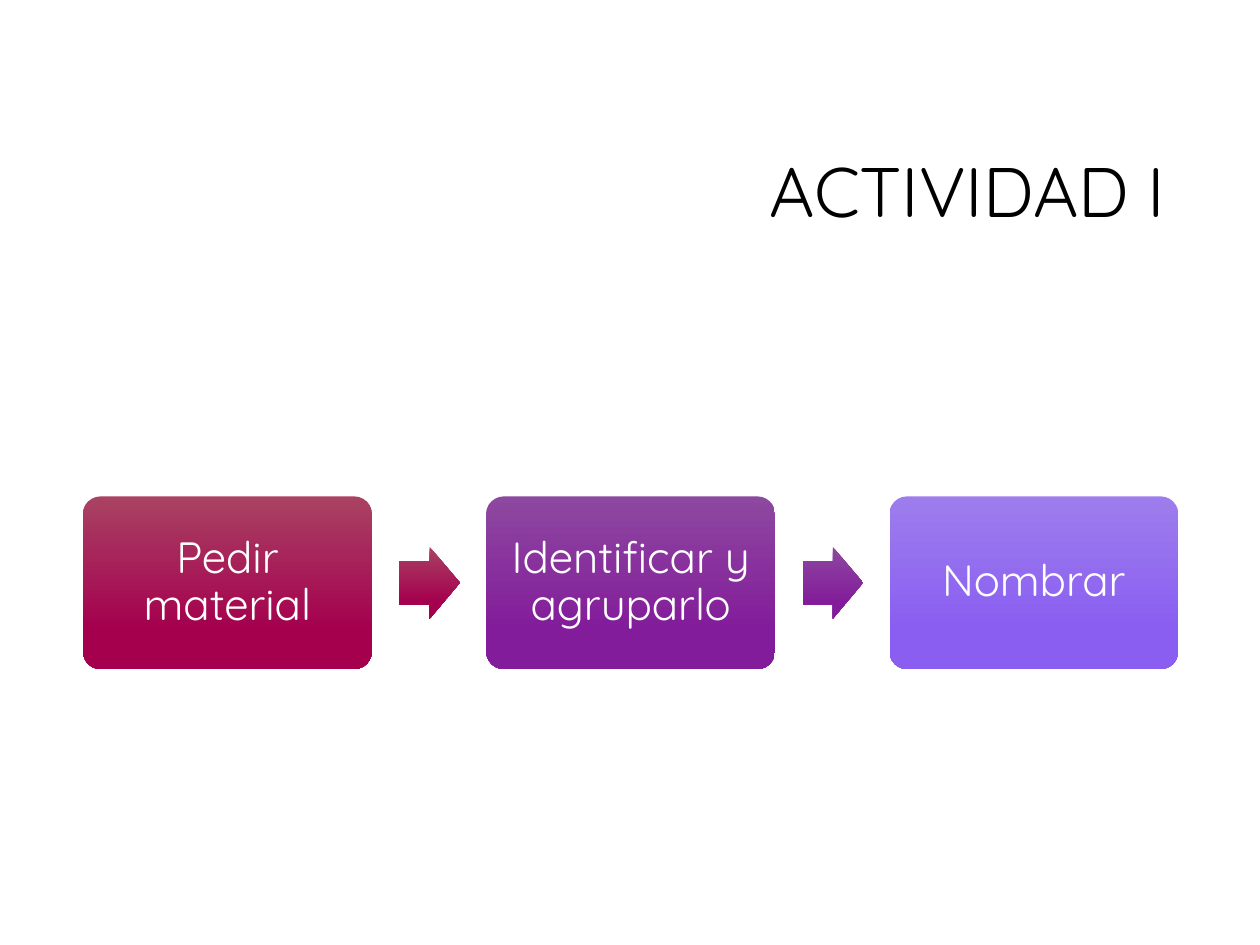
from pptx import Presentation
from pptx.dml.color import RGBColor
from pptx.enum.shapes import MSO_SHAPE
from pptx.enum.text import MSO_ANCHOR, PP_ALIGN
from pptx.util import Inches, Pt

TITLE = "ACTIVIDAD I"
STEPS = [
    ("Pedir material", RGBColor(0xA9, 0x42, 0x63), RGBColor(0xA4, 0x00, 0x4E)),
    ("Identificar y agruparlo", RGBColor(0x8D, 0x48, 0xA0), RGBColor(0x83, 0x1C, 0x9A)),
    ("Nombrar", RGBColor(0x9D, 0x7D, 0xED), RGBColor(0x8A, 0x5E, 0xF1)),
]
BLACK = RGBColor(0x00, 0x00, 0x00)
WHITE = RGBColor(0xFF, 0xFF, 0xFF)
FONT = "Quicksand"

SLIDE_W, SLIDE_H = Inches(10), Inches(7.5)
FLOW_LEFT, COLUMN_STEP = Inches(0.66), Inches(3.2)
STEP_W, STEP_H = Inches(2.29), Inches(1.37)
ARROW_W, ARROW_H = Inches(0.48), Inches(0.57)
ARROW_GAP = Inches(0.22)
FLOW_MIDDLE = Inches(4.625)
INSET = Inches(0.14)


def write(frame, text, size, color, align):
    frame.text = text
    frame.word_wrap = True
    frame.vertical_anchor = MSO_ANCHOR.MIDDLE
    paragraph = frame.paragraphs[0]
    paragraph.alignment = align
    paragraph.line_spacing = 0.9
    font = paragraph.runs[0].font
    font.name, font.size, font.color.rgb = FONT, Pt(size), color


def add_block(slide, preset, adjustments, left, width, height, top_color, bottom_color):
    block = slide.shapes.add_shape(preset, left, FLOW_MIDDLE - height // 2, width, height)
    for index, value in enumerate(adjustments):
        block.adjustments[index] = value
    block.shadow.inherit = False
    block.line.fill.background()
    block.fill.gradient()
    block.fill.gradient_angle = 270
    stops = block.fill.gradient_stops
    for stop, position, color in zip(stops, (0, 0.78), (top_color, bottom_color)):
        stop.position = position
        stop.color.rgb = color
    return block


def main():
    presentation = Presentation()
    presentation.slide_width, presentation.slide_height = SLIDE_W, SLIDE_H
    slide = presentation.slides.add_slide(presentation.slide_layouts[5])

    title = slide.shapes.title
    title.left, title.top = Inches(2.38), Inches(0.84)
    title.width, title.height = Inches(6.97), Inches(1.41)
    write(title.text_frame, TITLE, 40, BLACK, PP_ALIGN.RIGHT)

    for column, (label, top_color, bottom_color) in enumerate(STEPS):
        left = FLOW_LEFT + column * COLUMN_STEP
        step = add_block(slide, MSO_SHAPE.ROUNDED_RECTANGLE, [0.1], left,
                         STEP_W, STEP_H, top_color, bottom_color)
        frame = step.text_frame
        frame.margin_left = frame.margin_right = INSET
        frame.margin_top = frame.margin_bottom = INSET
        write(frame, label, 25, WHITE, PP_ALIGN.CENTER)
        if column < len(STEPS) - 1:
            add_block(slide, MSO_SHAPE.RIGHT_ARROW, [0.6, 0.5], left + STEP_W + ARROW_GAP,
                      ARROW_W, ARROW_H, top_color, bottom_color)

    presentation.save("out.pptx")


if __name__ == "__main__":
    main()
